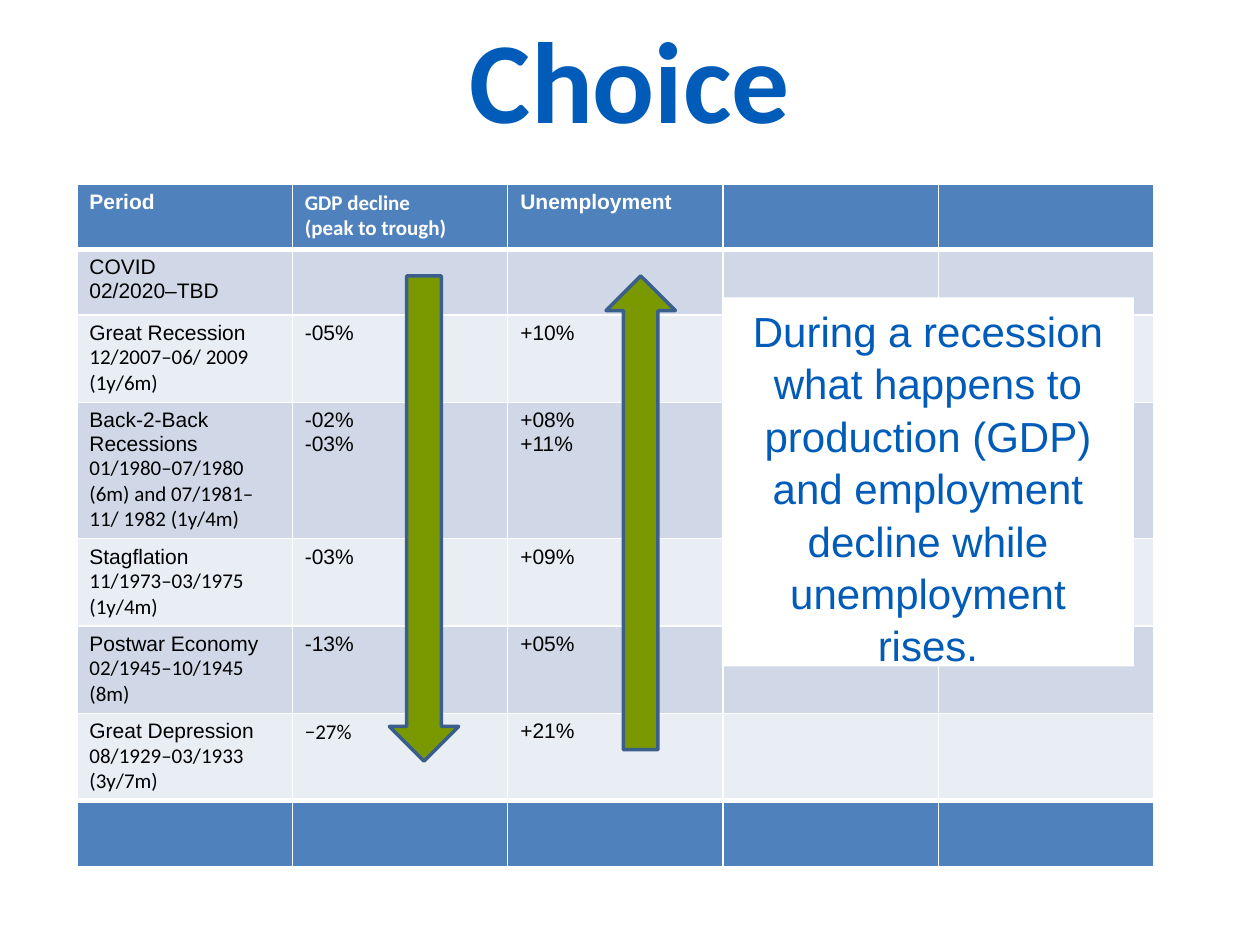
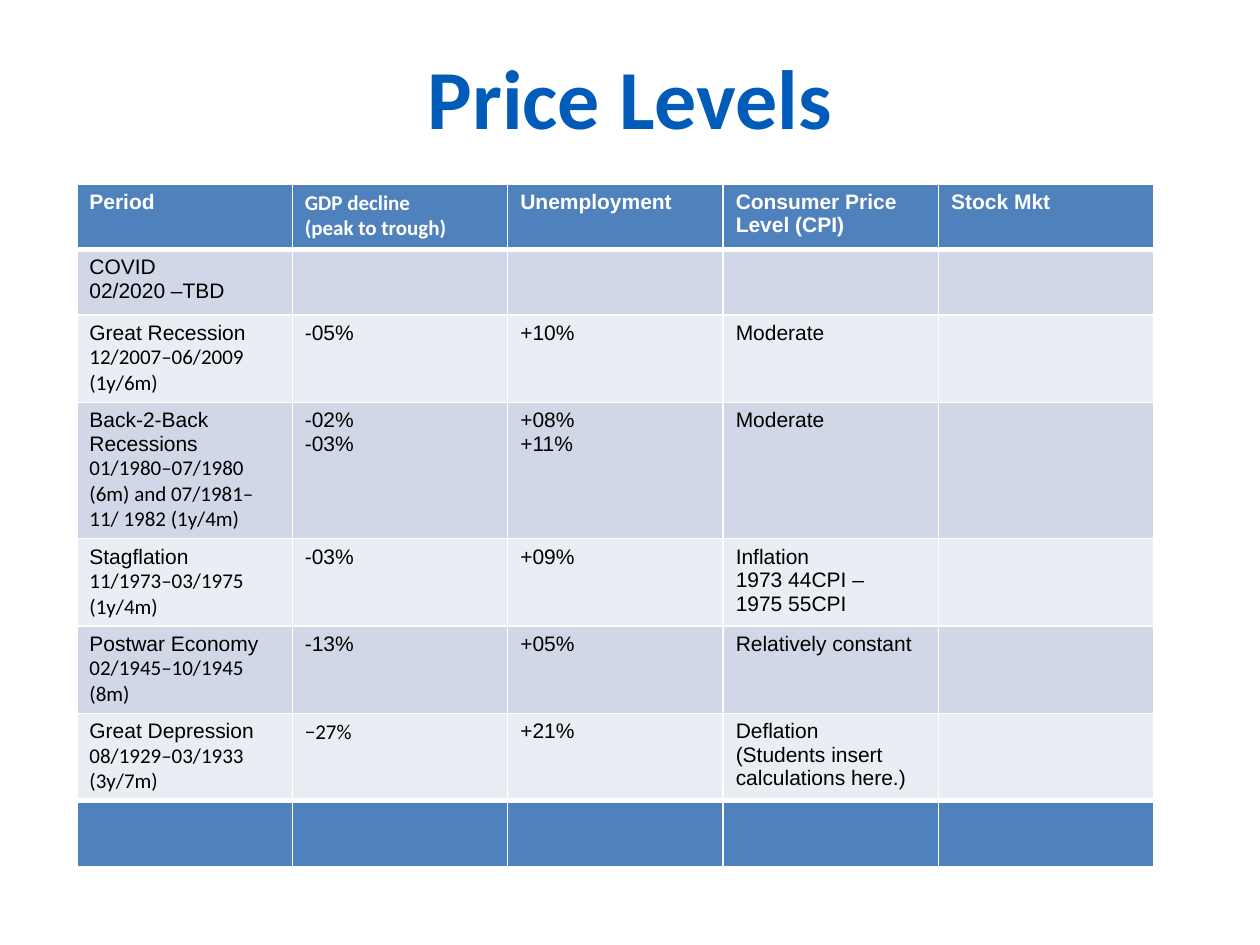
"""Build two slides that compare recessions by output, jobs and prices."""
import dataclasses
import typing

import lxml.etree
import pptx
import pptx.dml.color
import pptx.enum.shapes
import pptx.enum.text
import pptx.oxml.ns
import pptx.util

Inches = pptx.util.Inches
Pt = pptx.util.Pt
RGBColor = pptx.dml.color.RGBColor
MSO_SHAPE = pptx.enum.shapes.MSO_SHAPE
PP_ALIGN = pptx.enum.text.PP_ALIGN
MSO_ANCHOR = pptx.enum.text.MSO_ANCHOR
MSO_AUTO_SIZE = pptx.enum.text.MSO_AUTO_SIZE

TITLE_BLUE = RGBColor(0x00, 0x5C, 0xB8)
TABLE_BLUE = RGBColor(0x4F, 0x81, 0xBD)
BAND_DARK = RGBColor(0xD0, 0xD8, 0xE8)
BAND_LIGHT = RGBColor(0xE9, 0xED, 0xF4)
ARROW_GREEN = RGBColor(0x7A, 0x99, 0x00)
ARROW_EDGE = RGBColor(0x3A, 0x5F, 0x8C)
WHITE = RGBColor(0xFF, 0xFF, 0xFF)
BLACK = RGBColor(0x00, 0x00, 0x00)

ARIAL, CALIBRI = "Arial", "Calibri"
TITLE_LINE = Pt(57)
COL_W, ROW_H = Inches(1.71), Inches(0.52)
THIN, THICK = Pt(1), Pt(3)


class Line(typing.NamedTuple):
    """One paragraph of a cell and its font."""
    text: str
    font: str = ARIAL


Cell = list[Line]


@dataclasses.dataclass
class Period:
    """A recession and its figures, each figure a list of lines."""
    name: str
    dates: str
    gdp: tuple[str, ...] = ()
    jobs: tuple[str, ...] = ()
    cpi: tuple[str, ...] = ()
    date_font: str = CALIBRI
    gdp_font: str = ARIAL

    def cells(self, with_cpi: bool) -> list[Cell]:
        """Return the five cells of the row."""
        return [
            [Line(self.name), Line(self.dates, self.date_font)],
            [Line(t, self.gdp_font) for t in self.gdp],
            [Line(t) for t in self.jobs],
            [Line(t) for t in self.cpi if with_cpi],
            [],
        ]


@dataclasses.dataclass
class Arrow:
    """A vertical block arrow."""
    kind: MSO_SHAPE
    left: float
    height: float


PERIODS = [
    Period("COVID", "02/2020–TBD", date_font=ARIAL),
    Period("Great Recession", "12/2007–06/ 2009 (1y/6m)", ("-05%",), ("+10%",), ("Moderate",)),
    Period("Back-2-Back Recessions", "01/1980–07/1980 (6m) and 07/1981–11/ 1982 (1y/4m)",
           ("-02%", "-03%"), ("+08%", "+11%"), ("Moderate",)),
    Period("Stagflation", "11/1973–03/1975 (1y/4m)", ("-03%",), ("+09%",),
           ("Inflation", "1973 44CPI –", "1975 55CPI")),
    Period("Postwar Economy", "02/1945–10/1945 (8m)", ("-13%",), ("+05%",),
           ("Relatively constant",)),
    Period("Great Depression", "08/1929–03/1933 (3y/7m)", ("−27%",), ("+21%",),
           ("Deflation", "(Students insert calculations here.)"), gdp_font=CALIBRI),
]
PRICE_DATES = {"COVID": "02/2020 –TBD", "Great Recession": "12/2007–06/2009 (1y/6m)"}
HEADER = [
    [Line("Period")],
    [Line("GDP decline", CALIBRI), Line("(peak to trough)", CALIBRI)],
    [Line("Unemployment")],
]
PRICE_HEADER = [[Line("Consumer Price Level (CPI)")], [Line("Stock Mkt")]]
ARROWS = [Arrow(MSO_SHAPE.UP_ARROW, 4.81, 3.76), Arrow(MSO_SHAPE.DOWN_ARROW, 3.09, 3.85)]
ANSWER = ("During a recession what happens to production (GDP) and employment "
          "decline while unemployment rises.")


def set_font(p: typing.Any, text: str, color: RGBColor, **values: typing.Any) -> None:
    """Add a run and apply the font values."""
    r = p.add_run()
    r.text = text
    for name, value in values.items():
        setattr(r.font, name, value)
    r.font.color.rgb = color


def set_borders(cell: typing.Any, top: int, bottom: int) -> None:
    """Draw white borders around a cell."""
    tc_pr = cell._tc.get_or_add_tcPr()
    widths = {"a:lnL": THIN, "a:lnR": THIN, "a:lnT": top, "a:lnB": bottom}
    for i, (tag, width) in enumerate(widths.items()):
        ln = lxml.etree.Element(pptx.oxml.ns.qn(tag), w=str(int(width)))
        fill = lxml.etree.SubElement(ln, pptx.oxml.ns.qn("a:solidFill"))
        lxml.etree.SubElement(fill, pptx.oxml.ns.qn("a:srgbClr"), val=str(WHITE))
        tc_pr.insert(i, ln)


def add_slide(prs: typing.Any, title: str, size: int) -> typing.Any:
    """Add a slide with the shared title style."""
    s = prs.slides.add_slide(prs.slide_layouts[5])
    sp = s.shapes.title
    box = {"left": 0.5, "top": 0.14, "width": 9, "height": 1.25}
    for name, value in box.items():
        setattr(sp, name, Inches(value))
    tf = sp.text_frame
    tf.auto_size = MSO_AUTO_SIZE.NONE
    tf.vertical_anchor = MSO_ANCHOR.MIDDLE
    p = tf.paragraphs[0]
    p.alignment = PP_ALIGN.CENTER
    p.line_spacing = TITLE_LINE
    set_font(p, title, TITLE_BLUE, name=CALIBRI, size=Pt(size), bold=True)
    return s


def add_periods(s: typing.Any, header: list[Cell], periods: list[Period], with_cpi: bool) -> None:
    """Add the table of periods with a header and an empty closing row."""
    rows = [header, *(period.cells(with_cpi) for period in periods), [[]] * len(header)]
    last = len(rows) - 1
    table = s.shapes.add_table(len(rows), len(header), Inches(0.61), Inches(1.46),
                               COL_W * len(header), ROW_H * len(rows)).table
    table.last_row = True
    for i, row in enumerate(rows):
        table.rows[i].height = ROW_H
        edge = i in (0, last)
        for j, lines in enumerate(row):
            cell = table.cell(i, j)
            cell.fill.solid()
            cell.fill.fore_color.rgb = TABLE_BLUE if edge else (BAND_LIGHT, BAND_DARK)[i % 2]
            set_borders(cell, THICK if i in (1, last) else THIN,
                        THICK if i in (0, last - 1) else THIN)
            tf = cell.text_frame
            for k, line in enumerate(lines):
                p = tf.add_paragraph() if k else tf.paragraphs[0]
                set_font(p, line.text, WHITE if edge else BLACK,
                         name=line.font, size=Pt(12), bold=edge)


def add_arrow(s: typing.Any, arrow: Arrow) -> None:
    """Add a green trend arrow."""
    sp = s.shapes.add_shape(arrow.kind, Inches(arrow.left), Inches(2.19),
                            Inches(0.55), Inches(arrow.height))
    sp.shadow.inherit = False
    sp.fill.solid()
    sp.fill.fore_color.rgb = ARROW_GREEN
    sp.line.color.rgb = ARROW_EDGE
    sp.line.width = Pt(2)


def add_answer(s: typing.Any) -> None:
    """Add the white answer box over the table."""
    sp = s.shapes.add_textbox(Inches(5.73), Inches(2.36), Inches(3.27), Inches(2.93))
    sp.fill.solid()
    sp.fill.fore_color.rgb = WHITE
    tf = sp.text_frame
    tf.word_wrap = True
    tf.auto_size = MSO_AUTO_SIZE.SHAPE_TO_FIT_TEXT
    p = tf.paragraphs[0]
    p.alignment = PP_ALIGN.CENTER
    p.line_spacing = 1.04
    set_font(p, ANSWER, TITLE_BLUE, name=ARIAL, size=Pt(24))


def main() -> None:
    """Build and save both slides."""
    prs = pptx.Presentation()
    prs.slide_width, prs.slide_height = Inches(10), Inches(7.5)

    s = add_slide(prs, "Choice", 66)
    add_periods(s, HEADER + [[], []], PERIODS, with_cpi=False)
    for arrow in ARROWS:
        add_arrow(s, arrow)
    add_answer(s)

    s = add_slide(prs, "Price Levels", 48)
    periods = [dataclasses.replace(x, dates=PRICE_DATES.get(x.name, x.dates)) for x in PERIODS]
    add_periods(s, HEADER + PRICE_HEADER, periods, with_cpi=True)

    prs.save("out.pptx")


if __name__ == "__main__":
    main()
